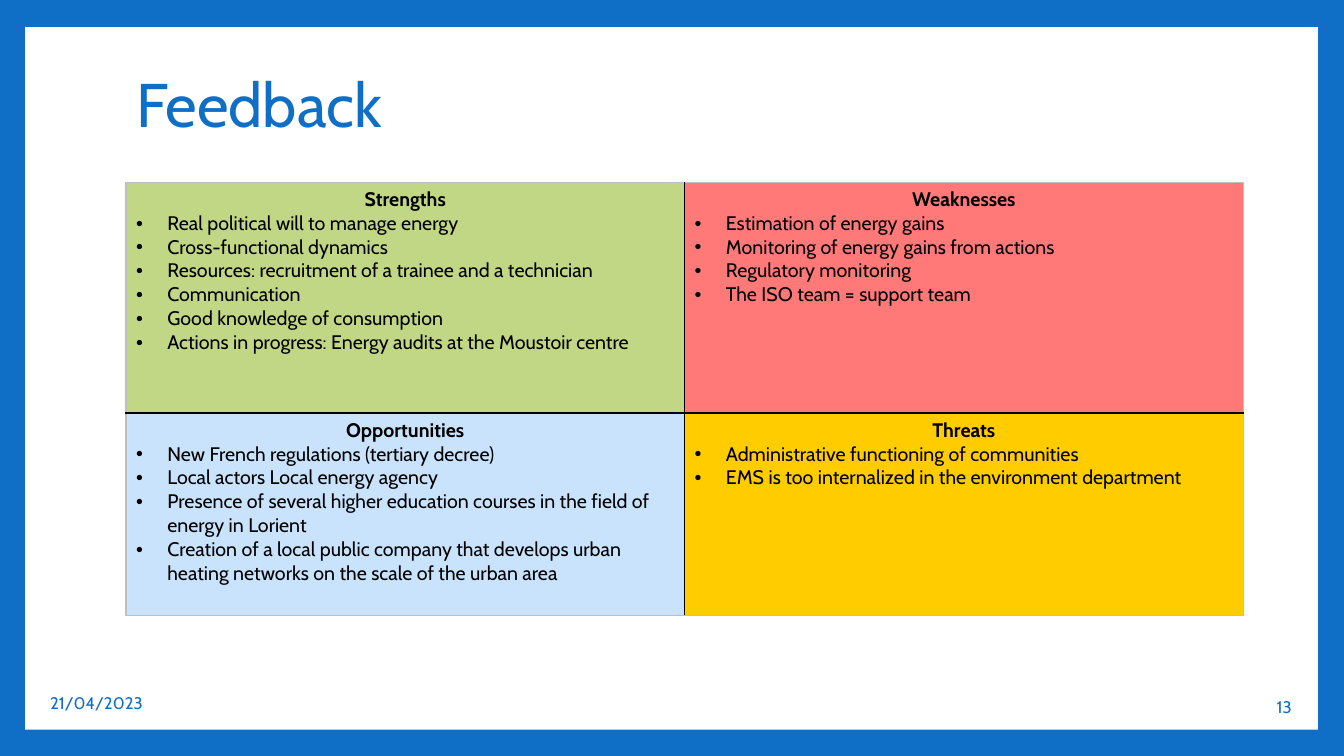
from lxml.etree import SubElement
from pptx import Presentation
from pptx.dml.color import RGBColor
from pptx.enum.shapes import MSO_SHAPE
from pptx.enum.text import MSO_ANCHOR, PP_ALIGN
from pptx.oxml.ns import qn
from pptx.util import Inches, Pt

FONT = "Cabin"
BLUE, WHITE, BLACK, GREY = "0F6FC6", "FFFFFF", "000000", "BFBFBF"

SWOT = [
    [
        ("Strengths", "C2D785", [
            "Real political will to manage energy",
            "Cross-functional dynamics",
            "Resources: recruitment of a trainee and a technician",
            "Communication",
            "Good knowledge of consumption",
            "Actions in progress: Energy audits at the Moustoir centre",
        ]),
        ("Weaknesses", "FF7979", [
            "Estimation of energy gains",
            "Monitoring of energy gains from actions",
            "Regulatory monitoring",
            "The ISO team = support team",
        ]),
    ],
    [
        ("Opportunities", "C8E3FB", [
            "New French regulations (tertiary decree)",
            "Local actors Local energy agency",
            "Presence of several higher education courses in the field of energy in Lorient",
            "Creation of a local public company that develops urban heating networks "
            "on the scale of the urban area",
        ]),
        ("Threats", "FFCC00", [
            "Administrative functioning of communities",
            "EMS is too internalized in the environment department",
        ]),
    ],
]


def paint(fill, color):
    fill.solid()
    fill.fore_color.rgb = RGBColor.from_string(color)


def write(paragraph, text, size=14, color=BLACK, bold=False,
          align=PP_ALIGN.LEFT, bullet=False, spacing=None):
    if bullet:
        properties = paragraph._p.get_or_add_pPr()
        properties.set("marL", str(Inches(0.31)))
        properties.set("indent", str(-Inches(0.31)))
        SubElement(properties, qn("a:buFont"), typeface="Arial")
        SubElement(properties, qn("a:buChar"), char="•")
    paragraph.alignment = align
    if spacing:
        paragraph.line_spacing = spacing
    run = paragraph.add_run()
    run.text = text
    run.font.name = FONT
    run.font.size = Pt(size)
    run.font.bold = bold
    run.font.color.rgb = RGBColor.from_string(color)


def add_panel(slide):
    panel = slide.shapes.add_shape(MSO_SHAPE.RECTANGLE, Inches(0.25), Inches(0.27),
                                   Inches(12.82), Inches(6.97))
    panel.shadow.inherit = False
    paint(panel.fill, WHITE)
    panel.line.fill.background()
    # Keep the panel behind the title
    slide.shapes._spTree.insert(2, panel._element)


def set_title(slide, text):
    title = slide.shapes.title
    title.left, title.top = Inches(1.25), Inches(0.33)
    title.width, title.height = Inches(11.66), Inches(1.48)
    title.text_frame.vertical_anchor = MSO_ANCHOR.MIDDLE
    write(title.text_frame.paragraphs[0], text, size=44, color=BLUE, spacing=0.9)


def add_footer(slide, text, left, top, width, align):
    footer = slide.shapes.add_textbox(Inches(left), Inches(top), Inches(width), Inches(0.4))
    footer.text_frame.word_wrap = True
    footer.text_frame.vertical_anchor = MSO_ANCHOR.MIDDLE
    write(footer.text_frame.paragraphs[0], text, size=12, color=BLUE, align=align)


def add_borders(cell, row, column):
    inner_sides = {"R" if column == 0 else "L", "B" if row == 0 else "T"}
    for side in "LRTB":
        inner = side in inner_sides
        border = SubElement(cell._tc.get_or_add_tcPr(), qn(f"a:ln{side}"),
                            w=str(Pt(1.5 if inner else 1)))
        solid = SubElement(border, qn("a:solidFill"))
        SubElement(solid, qn("a:srgbClr"), val=BLACK if inner else GREY)


def fill_quadrant(cell, heading, color, points):
    paint(cell.fill, color)
    write(cell.text_frame.paragraphs[0], heading, bold=True, align=PP_ALIGN.CENTER)
    for point in points:
        write(cell.text_frame.add_paragraph(), point, bullet=True)


def add_swot(slide):
    swot = slide.shapes.add_table(2, 2, Inches(1.25), Inches(1.81),
                                  Inches(11.08), Inches(4.3)).table
    swot.first_row = swot.horz_banding = False
    for column in swot.columns:
        column.width = Inches(5.54)
    for row, height in zip(swot.rows, (2.29, 2.01)):
        row.height = Inches(height)
    for row, quadrants in enumerate(SWOT):
        for column, quadrant in enumerate(quadrants):
            cell = swot.cell(row, column)
            add_borders(cell, row, column)
            fill_quadrant(cell, *quadrant)


def main():
    deck = Presentation()
    deck.slide_width, deck.slide_height = Inches(13.33), Inches(7.5)
    slide = deck.slides.add_slide(deck.slide_layouts[5])

    # Blue frame around a white panel
    paint(slide.background.fill, BLUE)
    add_panel(slide)

    # Title and footers
    set_title(slide, "Feedback")
    add_footer(slide, "21/04/2023", 0.4, 6.77, 1.37, PP_ALIGN.LEFT)
    add_footer(slide, "13", 11.66, 6.81, 1.25, PP_ALIGN.RIGHT)

    # Four quadrants
    add_swot(slide)
    deck.save("out.pptx")


if __name__ == "__main__":
    main()
